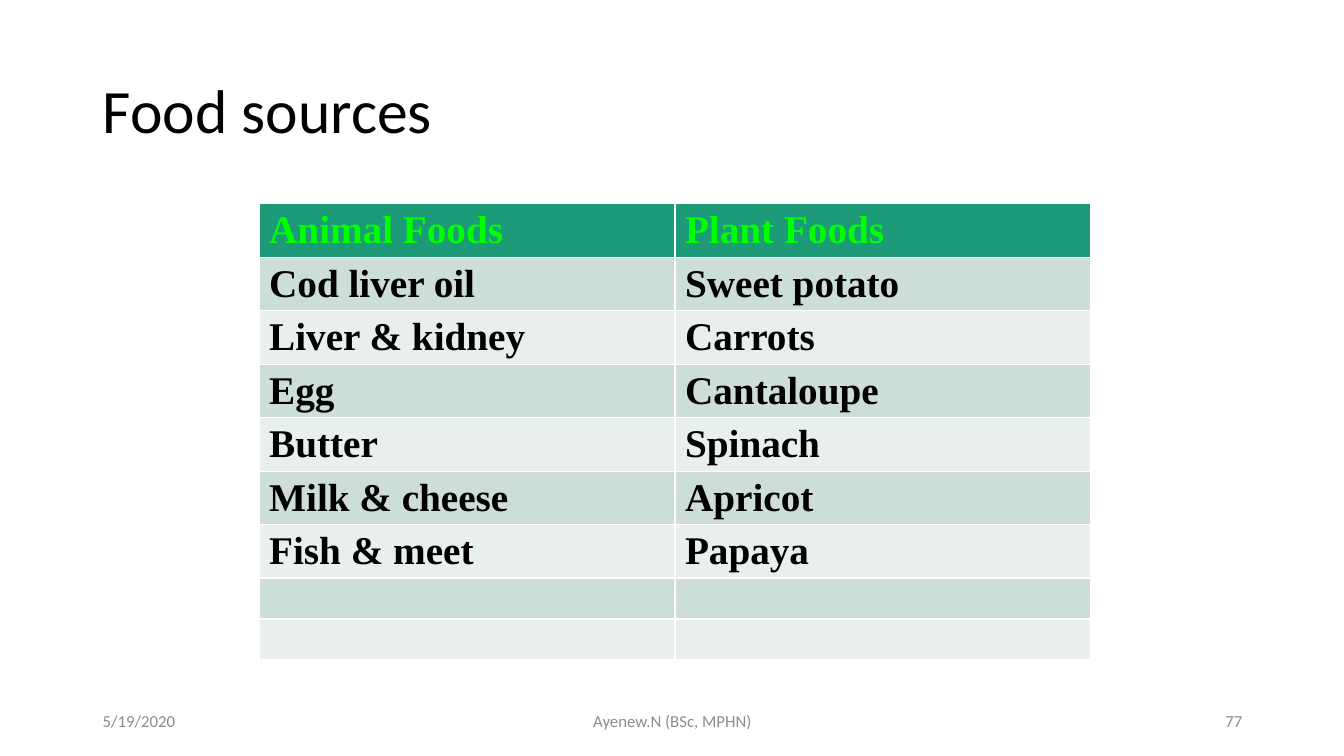
from pptx import Presentation
from pptx.dml.color import RGBColor
from pptx.enum.text import MSO_ANCHOR, PP_ALIGN
from pptx.util import Inches, Pt

LEFT, CENTER, RIGHT = PP_ALIGN.LEFT, PP_ALIGN.CENTER, PP_ALIGN.RIGHT
MIDDLE = MSO_ANCHOR.MIDDLE

THEME = {
    "sans": "Calibri", "serif": "Times New Roman",
    "title_size": 44, "table_size": 28, "footer_size": 12,
    "text": "000000", "header_text": "00FF00", "footer_text": "8C8C8C",
    "header_fill": "1D9A78", "bands": ("CDDED6", "E8EFEC"),
}


def add_run(p, text, font, size, color, bold=False):
    r = p.add_run()
    r.text = text
    r.font.name = font
    r.font.size = Pt(size)
    r.font.bold = bold
    r.font.color.rgb = RGBColor.from_string(color)


prs = Presentation()
prs.slide_width, prs.slide_height = Inches(13.33), Inches(7.5)
slide = prs.slides.add_slide(prs.slide_layouts[5])

# Title
title = slide.shapes.title
title.left, title.top = Inches(0.92), Inches(0.4)
title.width, title.height = Inches(11.5), Inches(1.45)
tf = title.text_frame
tf.vertical_anchor = MIDDLE
p = tf.paragraphs[0]
p.alignment = LEFT
p.line_spacing = 0.9
add_run(p, "Food sources", THEME["sans"], THEME["title_size"], THEME["text"])

# Food table: the default style supplies the white rules
foods = [
    ("Animal Foods", "Plant Foods"),
    ("Cod liver oil", "Sweet potato"),
    ("Liver & kidney", "Carrots"),
    ("Egg", "Cantaloupe"),
    ("Butter", "Spinach"),
    ("Milk & cheese", "Apricot"),
    ("Fish & meet", "Papaya"),
    ("", ""),
    ("", ""),
]
table = slide.shapes.add_table(len(foods), 2, Inches(2.57), Inches(2.02),
                               Inches(8.25), Inches(4.5)).table
for i, names in enumerate(foods):
    table.rows[i].height = Inches(0.53 if names[0] else 0.4)
    fill = THEME["bands"][(i - 1) % 2] if i else THEME["header_fill"]
    color = THEME["text"] if i else THEME["header_text"]
    for j, name in enumerate(names):
        cell = table.cell(i, j)
        cell.fill.solid()
        cell.fill.fore_color.rgb = RGBColor.from_string(fill)
        if name:
            add_run(cell.text_frame.paragraphs[0], name, THEME["serif"],
                    THEME["table_size"], color, bold=True)

# Footer: date, author, slide number
footer = [
    ("5/19/2020", 0.92, 3, LEFT),
    ("Ayenew.N (BSc, MPHN)", 4.42, 4.5, CENTER),
    ("77", 9.42, 3, RIGHT),
]
for text, left, width, align in footer:
    sp = slide.shapes.add_textbox(Inches(left), Inches(6.95), Inches(width), Inches(0.4))
    tf = sp.text_frame
    tf.word_wrap = True
    tf.vertical_anchor = MIDDLE
    p = tf.paragraphs[0]
    p.alignment = align
    add_run(p, text, THEME["sans"], THEME["footer_size"], THEME["footer_text"])

prs.save("out.pptx")
